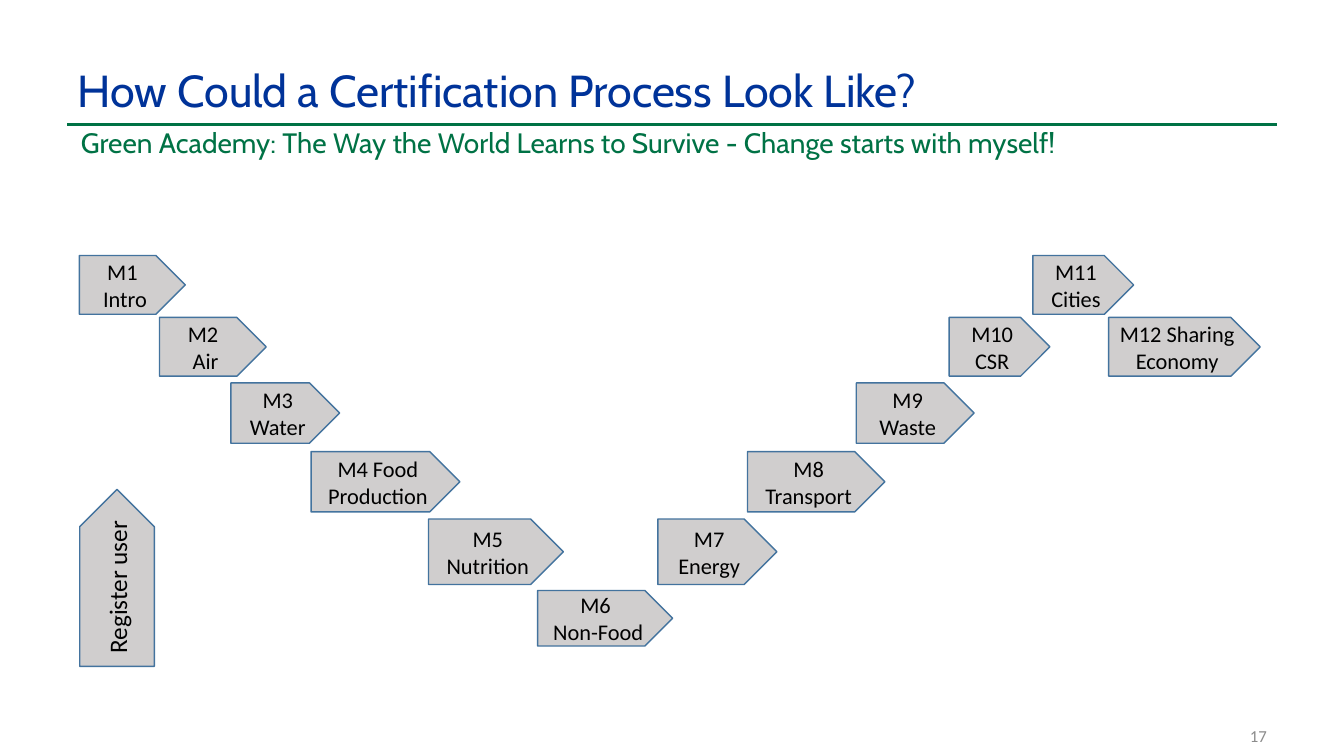
from dataclasses import dataclass

from lxml.etree import SubElement
from pptx import Presentation
from pptx.dml.color import RGBColor
from pptx.enum.shapes import MSO_CONNECTOR, MSO_SHAPE
from pptx.enum.text import MSO_ANCHOR, MSO_AUTO_SIZE, PP_ALIGN
from pptx.oxml.ns import qn
from pptx.util import Cm, Pt


@dataclass(frozen=True)
class Theme:
    heading_font: str = "Cabin"
    body_font: str = "Calibri"
    blue: RGBColor = RGBColor(0x00, 0x33, 0x99)
    green: RGBColor = RGBColor(0x00, 0x72, 0x45)
    step_fill: RGBColor = RGBColor(0xD0, 0xCE, 0xCE)
    step_line: RGBColor = RGBColor(0x43, 0x73, 0x9E)
    black: RGBColor = RGBColor(0, 0, 0)
    grey: RGBColor = RGBColor(0x8C, 0x8C, 0x8C)
    title_size: Pt = Pt(32)
    subtitle_size: Pt = Pt(20)
    register_size: Pt = Pt(18)
    module_size: Pt = Pt(16)
    number_size: Pt = Pt(12)


THEME = Theme()

# Top and height of each level of the path, in cm
LEVELS = [(6.44, 1.48), (8, 1.48), (9.65, 1.52), (11.38, 1.52), (13.08, 1.65), (14.88, 1.4)]

# Label, level, left and width in cm
MODULES = [
    ("M1 \nIntro", 0, 2, 2.67),
    ("M2 \nAir", 1, 4.02, 2.69),
    ("M3\nWater", 2, 5.82, 2.74),
    ("M4 Food Production", 3, 7.84, 3.75),
    ("M5\nNutrition", 4, 10.8, 3.4),
    ("M6 \nNon-Food", 5, 13.55, 3.4),
    ("M7\nEnergy", 4, 16.58, 3),
    ("M8\nTransport", 3, 18.84, 3.46),
    ("M9\nWaste", 2, 21.58, 2.97),
    ("M10\nCSR", 1, 23.92, 2.54),
    ("M11\nCities", 0, 26.03, 2.54),
    ("M12 Sharing Economy", 1, 27.94, 3.82),
]


def write(shape, text, font, size, color, align=PP_ALIGN.LEFT, anchor=MSO_ANCHOR.MIDDLE, spacing=1.0):
    frame = shape.text_frame
    frame.text = text
    frame.word_wrap = True
    frame.auto_size = MSO_AUTO_SIZE.NONE
    frame.vertical_anchor = anchor
    for paragraph in frame.paragraphs:
        paragraph.alignment = align
        paragraph.line_spacing = spacing
        paragraph.font.name = font
        paragraph.font.size = size
        paragraph.font.color.rgb = color


def add_title(slide, text):
    title = slide.shapes.title
    title.left, title.top, title.width, title.height = Cm(1.7), Cm(1.55), Cm(27.74), Cm(1.57)
    write(title, text, THEME.heading_font, THEME.title_size, THEME.blue, spacing=0.9)


def add_title_rule(slide):
    rule = slide.shapes.add_connector(MSO_CONNECTOR.STRAIGHT, Cm(1.7), Cm(3.13), Cm(32.17), Cm(3.13))
    rule.line.color.rgb = THEME.green
    rule.line.width = Pt(2.25)
    SubElement(rule._element.spPr, qn("a:effectLst"))


def add_subtitle(slide, text):
    subtitle = slide.shapes.add_textbox(Cm(1.79), Cm(3.13), Cm(30.38), Cm(1.95))
    write(subtitle, text, THEME.heading_font, THEME.subtitle_size, THEME.green,
          anchor=MSO_ANCHOR.TOP, spacing=0.9)


def add_slide_number(slide, number):
    box = slide.shapes.add_textbox(Cm(24.28), Cm(18.03), Cm(7.9), Cm(1.02))
    write(box, number, THEME.body_font, THEME.number_size, THEME.grey, PP_ALIGN.RIGHT)


def add_step(slide, label, left, top, width, height, size=THEME.module_size):
    """Add a labelled pentagon arrow, placed in cm."""
    step = slide.shapes.add_shape(MSO_SHAPE.PENTAGON, Cm(left), Cm(top), Cm(width), Cm(height))
    step.shadow.inherit = False
    step.fill.solid()
    step.fill.fore_color.rgb = THEME.step_fill
    step.line.color.rgb = THEME.step_line
    step.line.width = Pt(1)
    write(step, label, THEME.body_font, size, THEME.black, PP_ALIGN.CENTER)
    step.text_frame.margin_left = step.text_frame.margin_right = Cm(0.2)
    return step


def main():
    presentation = Presentation()
    presentation.slide_width, presentation.slide_height = Cm(33.87), Cm(19.05)
    slide = presentation.slides.add_slide(presentation.slide_layouts[5])

    add_title_rule(slide)
    add_slide_number(slide, "17")
    add_title(slide, "How Could a Certification Process Look Like?")
    add_subtitle(slide, "Green Academy: The Way the World Learns to Survive - Change starts with myself!")

    register = add_step(slide, "Register user", 0.72, 13.62, 4.46, 1.88, THEME.register_size)
    register.rotation = 270
    for label, level, left, width in MODULES:
        top, height = LEVELS[level]
        add_step(slide, label, left, top, width, height)

    presentation.save("out.pptx")


if __name__ == "__main__":
    main()
